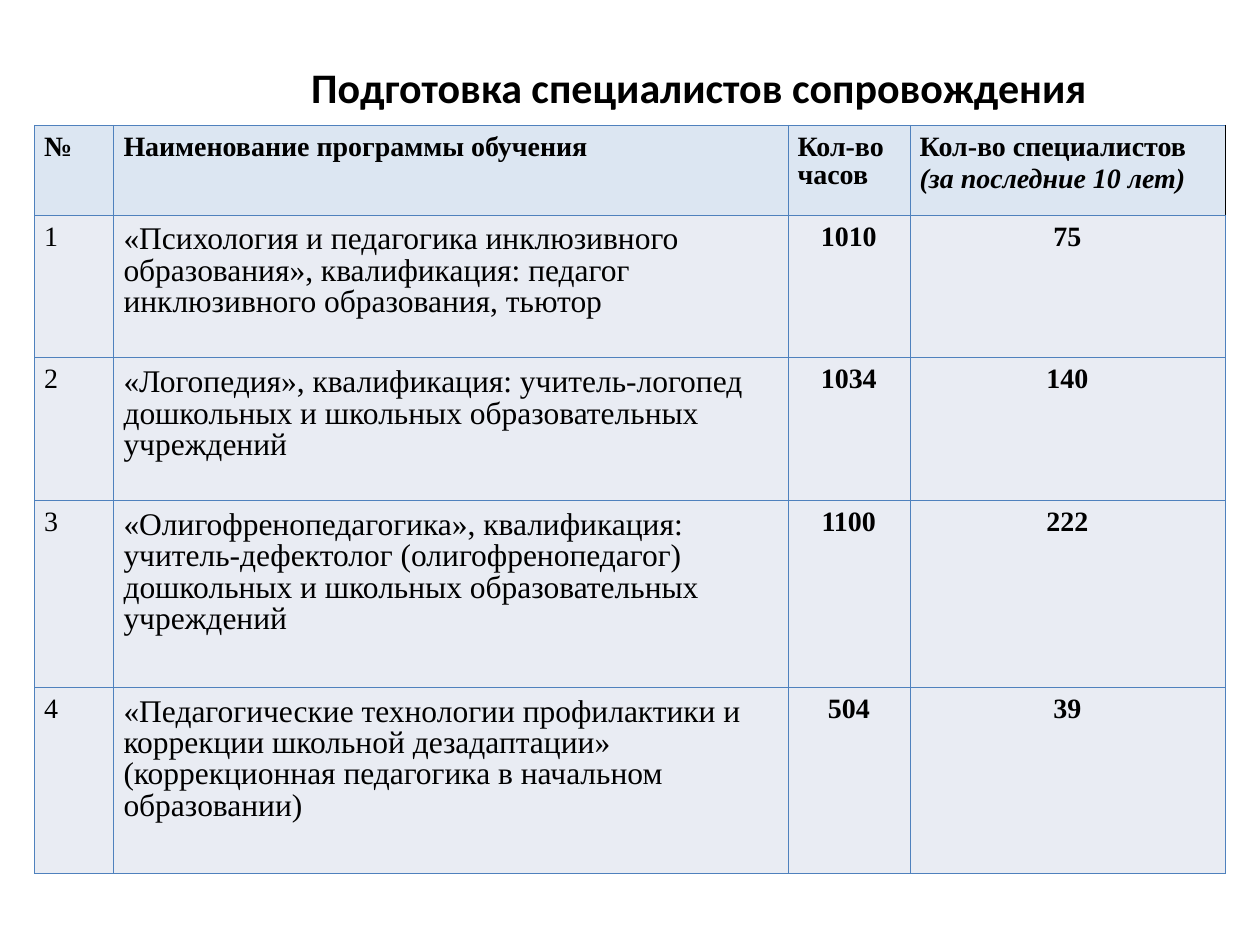
from dataclasses import dataclass

import lxml.etree
import pptx
import pptx.dml.color
import pptx.enum.text
import pptx.oxml.ns
import pptx.slide
import pptx.table
import pptx.util

Cm = pptx.util.Cm
Pt = pptx.util.Pt
ALIGN = pptx.enum.text.PP_ALIGN


@dataclass(frozen=True)
class Theme:
    title_font: str = "Calibri"
    table_font: str = "Times New Roman"
    title_size: float = 24
    programme_size: float = 18
    table_size: float = 16
    ink: str = "000000"
    header_fill: str = "DCE6F2"
    body_fill: str = "E9ECF3"
    border: str = "4F81BD"
    border_width: float = 0.23


@dataclass(frozen=True)
class Programme:
    name: str
    hours: int
    specialists: int


@dataclass(frozen=True)
class Column:
    heading: str
    width: float
    size: float
    align: ALIGN = ALIGN.LEFT
    bold: bool = False


THEME = Theme()

COLUMNS = [
    Column("№", 1.6, THEME.table_size),
    Column("Наименование программы обучения", 13.59, THEME.programme_size),
    Column("Кол-во часов", 2.46, THEME.table_size, ALIGN.CENTER, True),
    Column("Кол-во специалистов\n(за последние 10 лет)", 6.35,
           THEME.table_size, ALIGN.CENTER, True),
]

PROGRAMMES = [
    Programme("«Психология и педагогика инклюзивного образования», квалификация: "
              "педагог инклюзивного образования, тьютор", 1010, 75),
    Programme("«Логопедия», квалификация: учитель-логопед дошкольных и школьных "
              "образовательных учреждений", 1034, 140),
    Programme("«Олигофренопедагогика», квалификация: учитель-дефектолог "
              "(олигофренопедагог) дошкольных и школьных образовательных учреждений",
              1100, 222),
    Programme("«Педагогические технологии профилактики и коррекции школьной "
              "дезадаптации» (коррекционная педагогика в начальном образовании)",
              504, 39),
]

ROW_HEIGHTS = [1.81, 2.88, 2.88, 3.76, 3.76]


def rgb(colour: str) -> pptx.dml.color.RGBColor:
    return pptx.dml.color.RGBColor.from_string(colour)


def format_runs(paragraph, font: str, size: float, bold: bool,
                italic: bool = False) -> None:
    for run in paragraph.runs:
        run.font.name = font
        run.font.size = Pt(size)
        run.font.bold = bold
        run.font.italic = italic
        run.font.color.rgb = rgb(THEME.ink)


def set_borders(cell, right: str = THEME.border) -> None:
    qn = pptx.oxml.ns.qn
    properties = cell._tc.get_or_add_tcPr()
    for side in "LRTB":
        line = lxml.etree.SubElement(properties, qn(f"a:ln{side}"),
                                     w=str(Pt(THEME.border_width)))
        fill = lxml.etree.SubElement(line, qn("a:solidFill"))
        colour = right if side == "R" else THEME.border
        lxml.etree.SubElement(fill, qn("a:srgbClr"), val=colour)


def fill_cell(cell, text: str, fill: str, size: float, bold: bool,
              align: ALIGN = ALIGN.LEFT, right_border: str = THEME.border) -> None:
    set_borders(cell, right_border)
    cell.fill.solid()
    cell.fill.fore_color.rgb = rgb(fill)
    cell.margin_left = cell.margin_right = Cm(0.2)
    cell.margin_top = Cm(0.2 if size == THEME.programme_size else 0.18)
    cell.margin_bottom = Cm(0.13)
    cell.text_frame.text = text
    for index, paragraph in enumerate(cell.text_frame.paragraphs):
        is_note = index > 0
        paragraph.alignment = align
        paragraph.line_spacing = 1.04 if is_note else 0.9
        format_runs(paragraph, THEME.table_font, size, bold, italic=is_note)


def add_title(slide: pptx.slide.Slide, text: str) -> None:
    title = slide.shapes.title
    title.left, title.top = Cm(5.49), Cm(1.12)
    title.width, title.height = Cm(17.2), Cm(1.02)
    frame = title.text_frame
    frame.text = text
    frame.word_wrap = True
    frame.auto_size = pptx.enum.text.MSO_AUTO_SIZE.NONE
    frame.vertical_anchor = pptx.enum.text.MSO_ANCHOR.TOP
    frame.paragraphs[0].alignment = ALIGN.CENTER
    format_runs(frame.paragraphs[0], THEME.title_font, THEME.title_size, True)


def add_programme_table(slide: pptx.slide.Slide) -> None:
    table: pptx.table.Table = slide.shapes.add_table(
        len(ROW_HEIGHTS), len(COLUMNS), Cm(0.69), Cm(2.52),
        Cm(sum(column.width for column in COLUMNS)), Cm(sum(ROW_HEIGHTS))).table
    table.first_row = table.horz_banding = False
    for row, height in zip(table.rows, ROW_HEIGHTS):
        row.height = Cm(height)

    for position, column in enumerate(COLUMNS):
        table.columns[position].width = Cm(column.width)
        # Heading; the last one closes with a black edge
        edge = THEME.ink if column is COLUMNS[-1] else THEME.border
        fill_cell(table.cell(0, position), column.heading, THEME.header_fill,
                  THEME.table_size, True, right_border=edge)

    # One row for each programme
    for number, programme in enumerate(PROGRAMMES, start=1):
        values = (number, programme.name, programme.hours, programme.specialists)
        for position, (column, value) in enumerate(zip(COLUMNS, values)):
            fill_cell(table.cell(number, position), str(value), THEME.body_fill,
                      column.size, column.bold, column.align)


def main() -> None:
    presentation = pptx.Presentation()
    presentation.slide_width, presentation.slide_height = Cm(25.4), Cm(19.05)
    slide = presentation.slides.add_slide(presentation.slide_layouts[5])
    add_title(slide, "Подготовка специалистов сопровождения")
    add_programme_table(slide)
    presentation.save("out.pptx")


if __name__ == "__main__":
    main()
